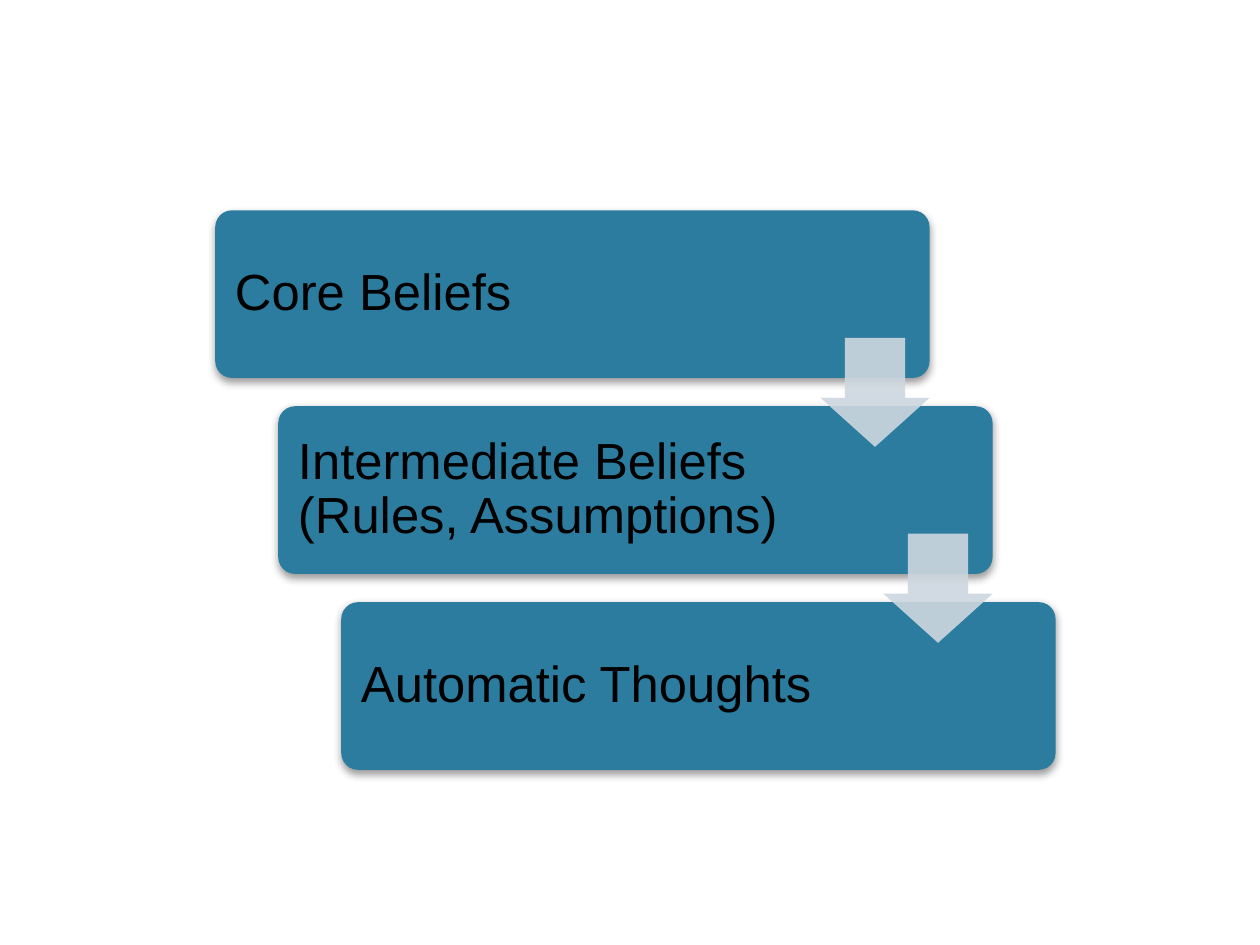
"""Build a slide with a descending staircase of three belief levels."""
from lxml import etree
from pptx import Presentation
from pptx.dml.color import RGBColor
from pptx.enum.shapes import MSO_SHAPE
from pptx.enum.text import MSO_ANCHOR, PP_ALIGN
from pptx.oxml import parse_xml
from pptx.oxml.ns import nsdecls, qn
from pptx.util import Cm, Pt

LEVELS = ["Core Beliefs", "Intermediate Beliefs (Rules, Assumptions)", "Automatic Thoughts"]

BLUE = RGBColor(0x2C, 0x7C, 0x9F)
PALE = RGBColor(0xCD, 0xD7, 0xDF)
BLACK = RGBColor(0, 0, 0)
ROUNDED, DOWN = MSO_SHAPE.ROUNDED_RECTANGLE, MSO_SHAPE.DOWN_ARROW
MIDDLE, LEFT = MSO_ANCHOR.MIDDLE, PP_ALIGN.LEFT

BOX_X, BOX_Y, BOX_W, BOX_H = Cm(4.34), Cm(4.24), Cm(14.4), Cm(3.38)
STEP_X, STEP_Y = Cm(1.27), Cm(3.95)
ARROW, ARROW_DROP = Cm(2.2), Cm(2.57)
INSET, RIGHT_INSET = Cm(0.3), Cm(3.76)


def add_filled(slide, kind, x, y, w, h, color, adjustments):
    sp = slide.shapes.add_shape(kind, x, y, w, h)
    for i, value in enumerate(adjustments):
        sp.adjustments[i] = value
    sp.fill.solid()
    sp.fill.fore_color.rgb = color
    sp.line.fill.background()
    sp.shadow.inherit = False
    return sp


def add_shadow(sp):
    effects = sp._element.spPr.find(qn("a:effectLst"))
    effects.append(parse_xml(
        f'<a:outerShdw {nsdecls("a")} blurRad="{Pt(5)}" dist="{Pt(2)}" dir="5400000" '
        'rotWithShape="0"><a:srgbClr val="000000"><a:alpha val="40000"/></a:srgbClr>'
        '</a:outerShdw>'))


def add_level(slide, x, y, text):
    sp = add_filled(slide, ROUNDED, x, y, BOX_W, BOX_H, BLUE, [0.1])
    add_shadow(sp)
    tf = sp.text_frame
    tf.word_wrap = True
    tf.vertical_anchor = MIDDLE
    tf.margin_left = tf.margin_top = tf.margin_bottom = INSET
    tf.margin_right = RIGHT_INSET
    p = tf.paragraphs[0]
    p.alignment = LEFT
    p.line_spacing = 0.9
    r = p.add_run()
    r.text = text
    r.font.name = "Arial"
    r.font.size = Pt(29)
    r.font.color.rgb = BLACK


def add_arrow(slide, x, y):
    sp = add_filled(slide, DOWN, x, y, ARROW, ARROW, PALE, [0.55, 0.45])
    color = sp._element.spPr.find(qn("a:solidFill"))[0]
    etree.SubElement(color, qn("a:alpha"), val="90000")


def main():
    prs = Presentation()
    prs.slide_width, prs.slide_height = Cm(25.4), Cm(19.05)
    slide = prs.slides.add_slide(prs.slide_layouts[6])
    corners = [(BOX_X + i * STEP_X, BOX_Y + i * STEP_Y) for i in range(len(LEVELS))]
    for (x, y), text in zip(corners, LEVELS):
        add_level(slide, x, y, text)
    for x, y in corners[:-1]:
        add_arrow(slide, x + BOX_W - ARROW, y + ARROW_DROP)
    prs.save("out.pptx")


if __name__ == "__main__":
    main()
